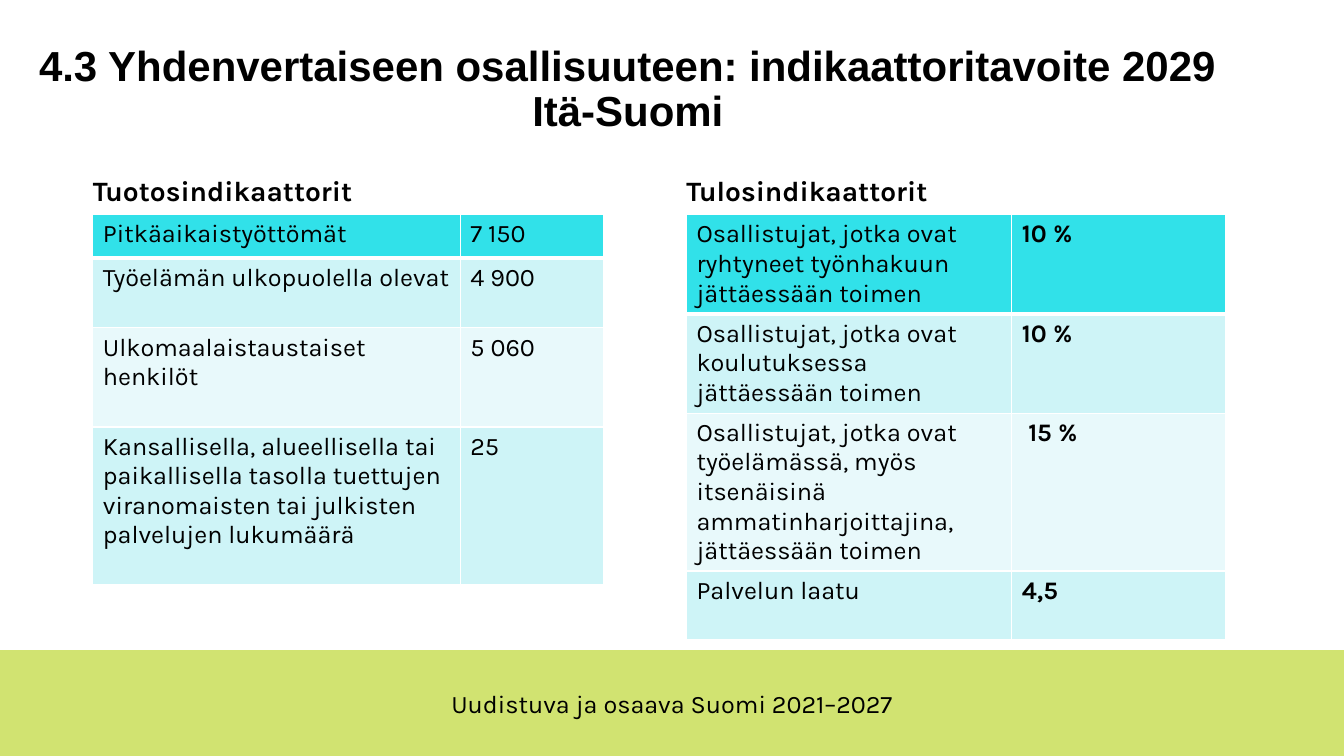
from lxml import etree
from pptx import Presentation
from pptx.dml.color import RGBColor
from pptx.enum.shapes import MSO_SHAPE
from pptx.enum.text import MSO_ANCHOR, MSO_AUTO_SIZE, PP_ALIGN
from pptx.oxml.ns import qn
from pptx.util import Cm, Pt

COLORS = {
    "text": "000000",
    "line": "FFFFFF",
    "footer": "D1E371",
    "header": "31E1E9",
    "dark band": "CEF4F7",
    "light band": "E8F9FB",
}
ROW_FILLS = ["header", "dark band", "light band", "dark band"]
TABLE_TOP = 5.41

# heading, left, column widths, bold values, rows of (height, label, value)
INDICATORS = [
    ("Tuotosindikaattorit", 2.34, [9.26, 3.62], False, [
        (1.1, "Pitkäaikaistyöttömät", "7 150"),
        (1.75, "Työelämän ulkopuolella olevat", "4 900"),
        (2.5, "Ulkomaalaistaustaiset henkilöt", "5 060"),
        (3.98, "Kansallisella, alueellisella tai paikallisella tasolla tuettujen "
               "viranomaisten tai julkisten palvelujen lukumäärä", "25"),
    ]),
    ("Tulosindikaattorit", 17.3, [8.2, 5.38], True, [
        (2.5, "Osallistujat, jotka ovat ryhtyneet työnhakuun jättäessään toimen", "10 %"),
        (2.5, "Osallistujat, jotka ovat koulutuksessa jättäessään toimen", "10 %"),
        (3.98, "Osallistujat, jotka ovat työelämässä, myös itsenäisinä "
               "ammatinharjoittajina, jättäessään toimen", " 15 %"),
        (1.73, "Palvelun laatu", "4,5"),
    ]),
]


def write(paragraph, text, size, bold=False, font="Karla"):
    run = paragraph.add_run()
    run.text = text
    run.font.size = Pt(size)
    run.font.bold = bold
    run.font.name = font
    run.font.color.rgb = RGBColor.from_string(COLORS["text"])


def prepare_frame(shape, anchor):
    """Place text at the box edges, wrapped and at a fixed size."""
    frame = shape.text_frame
    frame.margin_left = frame.margin_right = frame.margin_top = frame.margin_bottom = 0
    frame.word_wrap = True
    frame.auto_size = MSO_AUTO_SIZE.NONE
    frame.vertical_anchor = anchor
    return frame.paragraphs[0]


prs = Presentation()
prs.slide_width, prs.slide_height = Cm(33.87), Cm(19.05)
slide = prs.slides.add_slide(prs.slide_layouts.get_by_name("Comparison"))
title, left_heading, left_content, right_heading, right_content = slide.placeholders
for unused in (left_content, right_content):
    unused.element.getparent().remove(unused.element)

# Footer
band = slide.shapes.add_shape(MSO_SHAPE.RECTANGLE, 0, Cm(16.38), prs.slide_width, Cm(2.67))
band.shadow.inherit = False
band.fill.solid()
band.fill.fore_color.rgb = RGBColor.from_string(COLORS["footer"])
band.line.fill.background()
programme = slide.shapes.add_textbox(Cm(8.26), Cm(17.35), Cm(17.35), Cm(0.76))
programme_line = prepare_frame(programme, MSO_ANCHOR.MIDDLE)
programme_line.alignment = PP_ALIGN.CENTER
write(programme_line, "Uudistuva ja osaava Suomi 2021–2027", 18)

# Title
title.left, title.top, title.width, title.height = Cm(0.79), Cm(1.14), Cm(30.07), Cm(2.87)
title_line = prepare_frame(title, MSO_ANCHOR.TOP)
title_line.alignment = PP_ALIGN.CENTER
title_line.line_spacing = 0.9
write(title_line, "4.3 Yhdenvertaiseen osallisuuteen: indikaattoritavoite 2029", 30, True, "Arial")
title_line.add_line_break()
write(title_line, "Itä-Suomi", 30, True, "Arial")

# Headings and indicator tables
for heading, (name, left, widths, bold_values, rows) in zip(
        (left_heading, right_heading), INDICATORS):
    heading.left, heading.top, heading.width, heading.height = (
        Cm(left), Cm(4.19), Cm(13.59), Cm(1.02))
    heading_line = prepare_frame(heading, MSO_ANCHOR.BOTTOM)
    heading_line.space_before = Pt(0)
    write(heading_line, name, 20, True)

    table = slide.shapes.add_table(
        len(rows), len(widths), Cm(left), Cm(TABLE_TOP),
        Cm(sum(widths)), Cm(sum(height for height, _, _ in rows))).table
    table.first_row = table.horz_banding = False
    for column, width in zip(table.columns, widths):
        column.width = Cm(width)
    for r, (height, *texts) in enumerate(rows):
        table.rows[r].height = Cm(height)
        for c, text in enumerate(texts):
            cell = table.cell(r, c)
            write(cell.text_frame.paragraphs[0], text, 18, bold_values and c == 1)
            properties = cell._tc.get_or_add_tcPr()
            for side in "LRTB":
                thick = (r, side) in ((0, "B"), (1, "T"))
                border = etree.SubElement(
                    properties, qn(f"a:ln{side}"), w=str(Pt(3 if thick else 1)))
                border_fill = etree.SubElement(border, qn("a:solidFill"))
                etree.SubElement(border_fill, qn("a:srgbClr"), val=COLORS["line"])
            cell.fill.solid()
            cell.fill.fore_color.rgb = RGBColor.from_string(COLORS[ROW_FILLS[r]])

prs.save("out.pptx")
